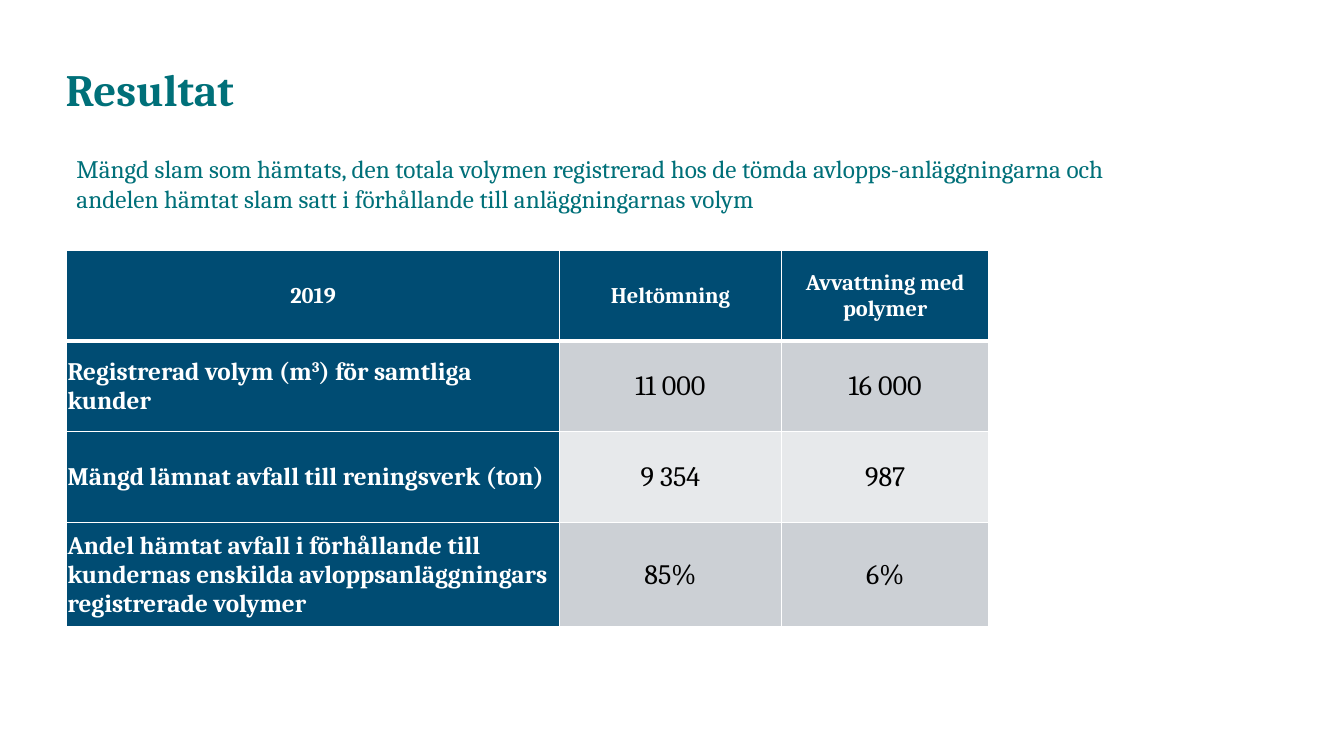
"""Build the result slide on collected sludge volumes."""
from dataclasses import dataclass

from lxml import etree
from pptx import Presentation
from pptx.dml.color import RGBColor
from pptx.enum.text import MSO_ANCHOR, MSO_AUTO_SIZE, PP_ALIGN
from pptx.oxml.ns import qn
from pptx.util import Inches, Pt

LEFT, CENTER = PP_ALIGN.LEFT, PP_ALIGN.CENTER
MIDDLE = MSO_ANCHOR.MIDDLE
FIXED = MSO_AUTO_SIZE.NONE
TITLE_ONLY = 5


@dataclass(frozen=True)
class Theme:
    font: str = "Cambria"
    teal: str = "007079"
    navy: str = "004C73"
    white: str = "FFFFFF"
    black: str = "000000"
    bands: tuple = ("CCD0D5", "E7E9EB")
    title_size: int = 32
    body_size: int = 18
    header_size: int = 16
    value_size: int = 20
    rule: int = 1
    header_rule: int = 3


def write(frame, parts, *, font, size, color, bold=False, align=LEFT, spacing=None):
    paragraph = frame.paragraphs[0]
    paragraph.alignment = align
    if spacing:
        paragraph.line_spacing = spacing
    for text, baseline in parts:
        run = paragraph.add_run()
        run.text = text
        run.font.name, run.font.size, run.font.bold = font, Pt(size), bold
        run.font.color.rgb = RGBColor.from_string(color)
        if baseline:
            run._r.get_or_add_rPr().set("baseline", str(baseline * 1000))


def plain(text):
    return [(text, 0)]


class ResultSlide:
    def __init__(self, presentation, theme):
        self.theme = theme
        self.slide = presentation.slides.add_slide(presentation.slide_layouts[TITLE_ONLY])

    def title(self, text, left, top, width, height):
        heading = self.slide.shapes.title
        heading.left, heading.top = Inches(left), Inches(top)
        heading.width, heading.height = Inches(width), Inches(height)
        frame = heading.text_frame
        frame.word_wrap, frame.auto_size, frame.vertical_anchor = True, FIXED, MIDDLE
        write(frame, plain(text), font=self.theme.font, size=self.theme.title_size,
              color=self.theme.teal, bold=True, spacing=0.9)

    def intro(self, text, left, top, width, height):
        box = self.slide.shapes.add_textbox(Inches(left), Inches(top), Inches(width), Inches(height))
        box.text_frame.word_wrap = True
        write(box.text_frame, plain(text), font=self.theme.font,
              size=self.theme.body_size, color=self.theme.teal)

    def border(self, cell, row):
        rule, heavy = self.theme.rule, self.theme.header_rule
        widths = {"lnL": rule, "lnR": rule,
                  "lnT": heavy if row == 1 else rule,
                  "lnB": heavy if row == 0 else rule}
        properties = cell._tc.get_or_add_tcPr()
        for position, (side, width) in enumerate(widths.items()):
            line = etree.Element(qn(f"a:{side}"), w=str(Pt(width)))
            fill = etree.SubElement(line, qn("a:solidFill"))
            etree.SubElement(fill, qn("a:srgbClr"), val=self.theme.white)
            properties.insert(position, line)

    def cell(self, cell, parts, row, column):
        theme = self.theme
        is_value = row > 0 and column > 0
        cell.margin_left = cell.margin_right = cell.margin_top = Inches(0.01)
        cell.margin_bottom = 0
        cell.vertical_anchor = MIDDLE
        cell.fill.solid()
        fill = theme.bands[(row - 1) % 2] if is_value else theme.navy
        cell.fill.fore_color.rgb = RGBColor.from_string(fill)
        self.border(cell, row)
        if row == 0:
            size = theme.header_size
        else:
            size = theme.value_size if is_value else theme.body_size
        write(cell.text_frame, parts, font=theme.font, size=size,
              color=theme.black if is_value else theme.white, bold=not is_value,
              align=LEFT if row and column == 0 else CENTER)

    def table(self, rows, left, top, widths, heights):
        table = self.slide.shapes.add_table(
            len(heights), len(widths), Inches(left), Inches(top),
            Inches(sum(widths)), Inches(sum(heights))).table
        for column, width in zip(table.columns, widths):
            column.width = Inches(width)
        for row, height in zip(table.rows, heights):
            row.height = Inches(height)
        for r, row in enumerate(rows):
            for c, parts in enumerate(row):
                self.cell(table.cell(r, c), parts, r, c)


def main():
    presentation = Presentation()
    presentation.slide_width, presentation.slide_height = Inches(13.33), Inches(7.5)
    result = ResultSlide(presentation, Theme())
    result.title("Resultat", 0.55, 0.56, 7.67, 0.7)
    result.intro(
        "Mängd slam som hämtats, den totala volymen registrerad hos de tömda "
        "avlopps-anläggningarna och andelen hämtat slam satt i förhållande till "
        "anläggningarnas volym", 0.66, 1.47, 10.39, 0.71)
    registered = [("Registrerad volym (m", 0), ("3", 30), (") för samtliga kunder", 0)]
    share = ("Andel hämtat avfall i förhållande till kundernas enskilda "
             "avloppsanläggningars registrerade volymer")
    volumes = [
        [plain("2019"), plain("Heltömning"), plain("Avvattning med polymer")],
        [registered, plain("11 000"), plain("16 000")],
        [plain("Mängd lämnat avfall till reningsverk (ton)"), plain("9 354"), plain("987")],
        [plain(share), plain("85%"), plain("6%")],
    ]
    result.table(volumes, 0.66, 2.48, widths=(4.89, 2.2, 2.06), heights=(0.9, 0.9, 0.9, 1.04))
    presentation.save("out.pptx")


if __name__ == "__main__":
    main()
